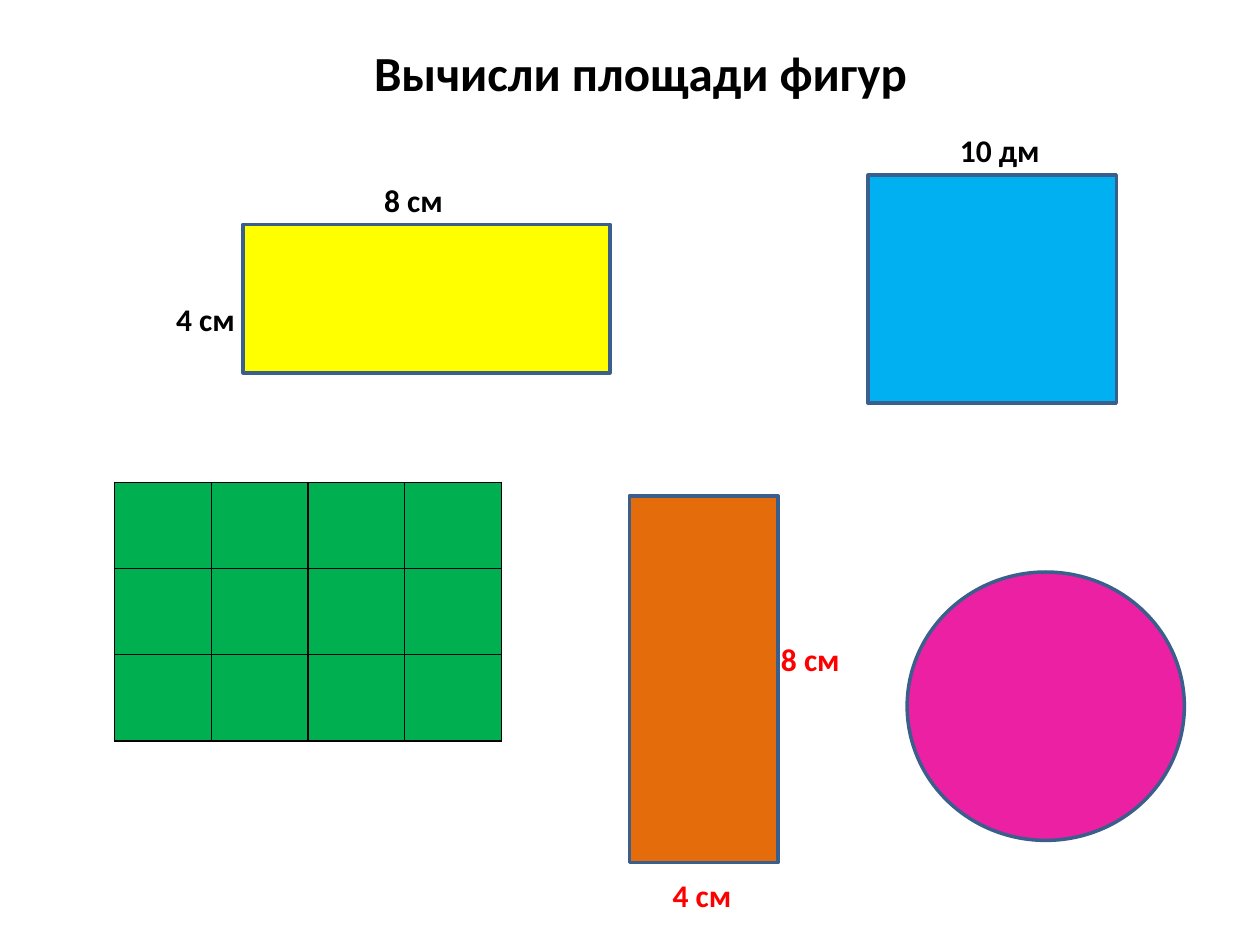
from lxml import etree
from pptx import Presentation
from pptx.dml.color import RGBColor
from pptx.enum import shapes, text
from pptx.oxml.ns import qn
from pptx.util import Inches, Pt

BLACK, RED, OUTLINE = "000000", "FF0000", "3A5F8C"
RECTANGLE, OVAL = shapes.MSO_SHAPE.RECTANGLE, shapes.MSO_SHAPE.OVAL


def color(value):
    return RGBColor.from_string(value)


def inches(box):
    return [Inches(length) for length in box]


def add_label(parent, box, words, size=18, ink=BLACK):
    label = parent.add_textbox(*inches(box))
    frame = label.text_frame
    frame.word_wrap = False
    frame.auto_size = text.MSO_AUTO_SIZE.SHAPE_TO_FIT_TEXT
    span = frame.paragraphs[0].add_run()
    span.text = words
    span.font.name = "Calibri"
    span.font.size = Pt(size)
    span.font.bold = True
    span.font.color.rgb = color(ink)


def add_figure(parent, kind, box, fill, rotation=0):
    figure = parent.add_shape(kind, *inches(box))
    figure.shadow.inherit = False
    figure.rotation = rotation
    figure.fill.solid()
    figure.fill.fore_color.rgb = color(fill)
    figure.line.color.rgb = color(OUTLINE)
    figure.line.width = Pt(2)


def add_measured_figure(page, box, fill, labels, ink=BLACK, rotation=0):
    """Group a rectangle with side labels, each placed relative to its box."""
    group = page.shapes.add_group_shape().shapes
    add_figure(group, RECTANGLE, box, fill, rotation)
    left, top = box[:2]
    for words, dx, dy, width in labels:
        add_label(group, (left + dx, top + dy, width, 0.4), words, ink=ink)


def outline_cell(cell):
    properties = cell._tc.get_or_add_tcPr()
    for index, side in enumerate(("lnL", "lnR", "lnT", "lnB")):
        border = etree.Element(qn(f"a:{side}"), w=str(Pt(1)))
        fill = etree.SubElement(border, qn("a:solidFill"))
        etree.SubElement(fill, qn("a:srgbClr"), val=BLACK)
        properties.insert(index, border)


def add_unit_grid(page, box, rows, columns, fill):
    left, top, width, height = inches(box)
    grid = page.shapes.add_table(rows, columns, left, top, width, height).table
    grid.first_row = grid.horz_banding = False
    for cell in grid.iter_cells():
        cell.fill.solid()
        cell.fill.fore_color.rgb = color(fill)
        outline_cell(cell)


def build_slide(deck):
    page = deck.slides.add_slide(deck.slide_layouts[6])

    # Upper row: yellow rectangle and blue square
    add_measured_figure(page, (1.93, 1.78, 2.91, 1.18), "FFFF00",
                        [("8 см", 1.02, -0.39, 0.67), ("4 см", -0.63, 0.55, 0.67)])
    add_measured_figure(page, (6.89, 1.39, 1.97, 1.81), "00B0F0",
                        [("10 дм", 0.63, -0.4, 0.84)])

    # Lower row: unit squares and circle
    add_unit_grid(page, (0.91, 3.83, 3.07, 2.05), 3, 4, "00B050")
    add_figure(page.shapes, OVAL, (7.2, 4.54, 2.2, 2.13), "EC20A3")

    # Title
    add_label(page.shapes, (2.87, 0.29, 4.48, 0.57), "Вычисли площади фигур", 28)

    # The upper rectangle's size, turned upright
    add_measured_figure(page, (4.13, 4.8, 2.91, 1.18), "E46C0A",
                        [("8 см", 1.97, 0.23, 0.67), ("4 см", 1.11, 2.1, 0.67)],
                        ink=RED, rotation=90)


def main():
    deck = Presentation()
    deck.slide_width, deck.slide_height = Inches(10), Inches(7.5)
    build_slide(deck)
    deck.save("out.pptx")


if __name__ == "__main__":
    main()
